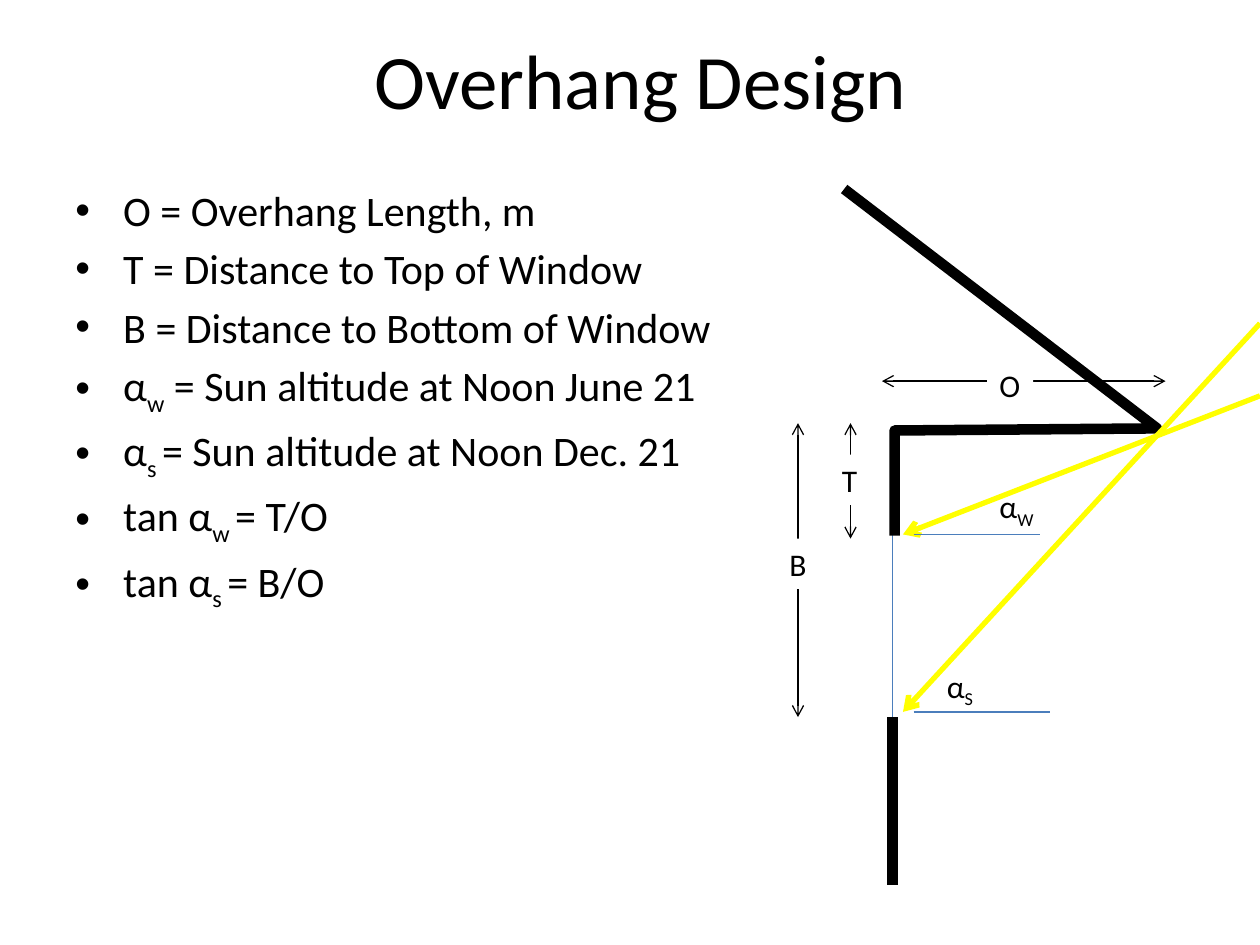
from pptx import Presentation
from pptx.dml.color import RGBColor
from pptx.enum.shapes import MSO_CONNECTOR, MSO_SHAPE
from pptx.enum.text import MSO_ANCHOR, MSO_AUTO_SIZE, PP_ALIGN
from pptx.oxml.ns import qn
from pptx.util import Emu, Inches, Pt
from lxml.etree import SubElement
from dataclasses import dataclass


@dataclass(frozen=True)
class Theme:
    """Colours, type sizes and line widths."""
    face: str = "Calibri"
    ink: str = "000000"
    paper: str = "FFFFFF"
    sun: str = "FFFF00"
    glass: str = "4B7EBC"
    head: int = 44
    body: int = 24
    mark: int = 18
    thin: float = 0.75
    ray: int = 3
    wall: int = 6


THEME = Theme()
COLS, ROWS = 120, 90
WIDE, HIGH = Inches(10), Inches(7.5)

NOTES = [
    ["O = Overhang Length, m"],
    ["T = Distance to Top of Window"],
    ["B = Distance to Bottom of Window"],
    ["α", "w", " = Sun altitude at Noon June 21"],
    ["α", "s ", "= Sun altitude at Noon Dec. 21"],
    ["tan α", "w ", "= T/O"],
    ["tan α", "s ", "= B/O"],
]
EAVE, TOP, SILL, BASE = 40.3, 50.9, 67.8, 84.3
WALL = 85


def grid(col, row):
    """Turn a column and row into slide lengths."""
    return Emu(round(WIDE * col / COLS)), Emu(round(HIGH * row / ROWS))


def style(item, **vals):
    """Set each named value on an item."""
    for name, val in vals.items():
        setattr(item, name, val)


def write(para, parts, size):
    """Write runs, with every second one as a subscript."""
    for num, part in enumerate(parts):
        run = para.add_run()
        run.text = part
        style(run.font, name=THEME.face, size=Pt(size))
        run.font.color.rgb = RGBColor.from_string(THEME.ink)
        if num % 2:
            run._r.get_or_add_rPr().set("baseline", "-25000")


def stroke(line, tint, width):
    """Set a line's colour and width."""
    line.width = Pt(width)
    line.color.rgb = RGBColor.from_string(tint)


def link(shapes, start, end, tint, width, ends=()):
    """Draw a straight line with arrows at the named ends."""
    item = shapes.add_connector(MSO_CONNECTOR.STRAIGHT, *grid(*start), *grid(*end))
    stroke(item.line, tint, width)
    for name in ends:
        SubElement(item.line._get_or_add_ln(), qn(f"a:{name}End"), type="arrow")
    SubElement(item._element.spPr, qn("a:effectLst"))


def label(shapes, spot, size, parts, solid=False):
    """Place a short mark, on a white patch if solid."""
    area = (*grid(*spot), *grid(*size))
    if solid:
        item = shapes.add_shape(MSO_SHAPE.RECTANGLE, *area)
        item.shadow.inherit = False
        item.fill.solid()
        item.fill.fore_color.rgb = RGBColor.from_string(THEME.paper)
        item.line.fill.background()
    else:
        item = shapes.add_textbox(*area)
    style(item.text_frame, word_wrap=False, vertical_anchor=MSO_ANCHOR.TOP,
          auto_size=MSO_AUTO_SIZE.SHAPE_TO_FIT_TEXT)
    para = item.text_frame.paragraphs[0]
    para.alignment = PP_ALIGN.LEFT
    write(para, parts, THEME.mark)


def roof(shapes, spots):
    """Draw the open outline of roof, overhang and wall."""
    pts = [grid(*spot) for spot in spots]
    path = shapes.build_freeform(*pts[0])
    path.add_line_segments(pts[1:], close=False)
    item = path.convert_to_shape()
    item.shadow.inherit = False
    item.fill.background()
    stroke(item.line, THEME.ink, THEME.wall)
    SubElement(item.line._get_or_add_ln(), qn("a:round"))


def title(slide, text):
    """Move and fill the title."""
    item = slide.shapes.title
    left, top = grid(7, 0)
    width, height = grid(108, 15)
    style(item, left=left, top=top, width=width, height=height)
    item.text_frame.vertical_anchor = MSO_ANCHOR.MIDDLE
    para = item.text_frame.paragraphs[0]
    para.alignment = PP_ALIGN.CENTER
    write(para, [text], THEME.head)


def notes(slide, rows):
    """Write the bulleted list."""
    frame = slide.shapes.add_textbox(*grid(6, 17), *grid(67, 63.4)).text_frame
    frame.word_wrap = True
    for num, parts in enumerate(rows):
        para = frame.add_paragraph() if num else frame.paragraphs[0]
        para.space_before = Pt(4.5)
        props = para._p.get_or_add_pPr()
        props.set("marL", str(Inches(0.38)))
        props.set("indent", str(-Inches(0.38)))
        SubElement(props, qn("a:buFont"), typeface="Arial")
        SubElement(props, qn("a:buChar"), char="•")
        write(para, parts, THEME.body)


def house(slide):
    """Draw the wall section, its sizes and the sun's rays."""
    shapes = slide.shapes.add_group_shape().shapes
    both = ("head", "tail")
    link(shapes, (WALL, 49.8), (WALL, 72.8), THEME.glass, THEME.thin)
    spans = [
        ((81, EAVE), (81, 51.3), (79, 43.3), 3.8, "T"),
        ((84, 36.3), (111, 36.3), (94, 34.3), 4.4, "O"),
        ((76, EAVE), (76, 68.3), (74, 51.3), 4.1, "B"),
    ]
    for start, end, spot, width, text in spans:
        link(shapes, start, end, THEME.ink, THEME.thin, both)
        label(shapes, spot, (width, 4.8), [text], True)
    roof(shapes, [(80.4, 18), (110.2, 40.8), (85.2, 41), (85.2, 51)])
    link(shapes, (WALL, 68.3), (WALL, BASE), THEME.ink, THEME.wall)
    rays = [
        (TOP, 37.7, 99, (94, 45.8), 6.1, "W"),
        (SILL, 30.8, 100, (89, 62.9), 5.3, "S"),
    ]
    for row, sky, stop, spot, width, sub in rays:
        link(shapes, (86, row), (COLS, sky), THEME.sun, THEME.ray, ("head",))
        link(shapes, (87, row), (stop, row), THEME.glass, THEME.thin)
        label(shapes, spot, (width, 4.8), ["α", sub])


def main():
    """Build and save the slide."""
    deck = Presentation()
    style(deck, slide_width=WIDE, slide_height=HIGH)
    slide = deck.slides.add_slide(deck.slide_layouts[5])
    title(slide, "Overhang Design")
    notes(slide, NOTES)
    house(slide)
    deck.save("out.pptx")


if __name__ == "__main__":
    main()
